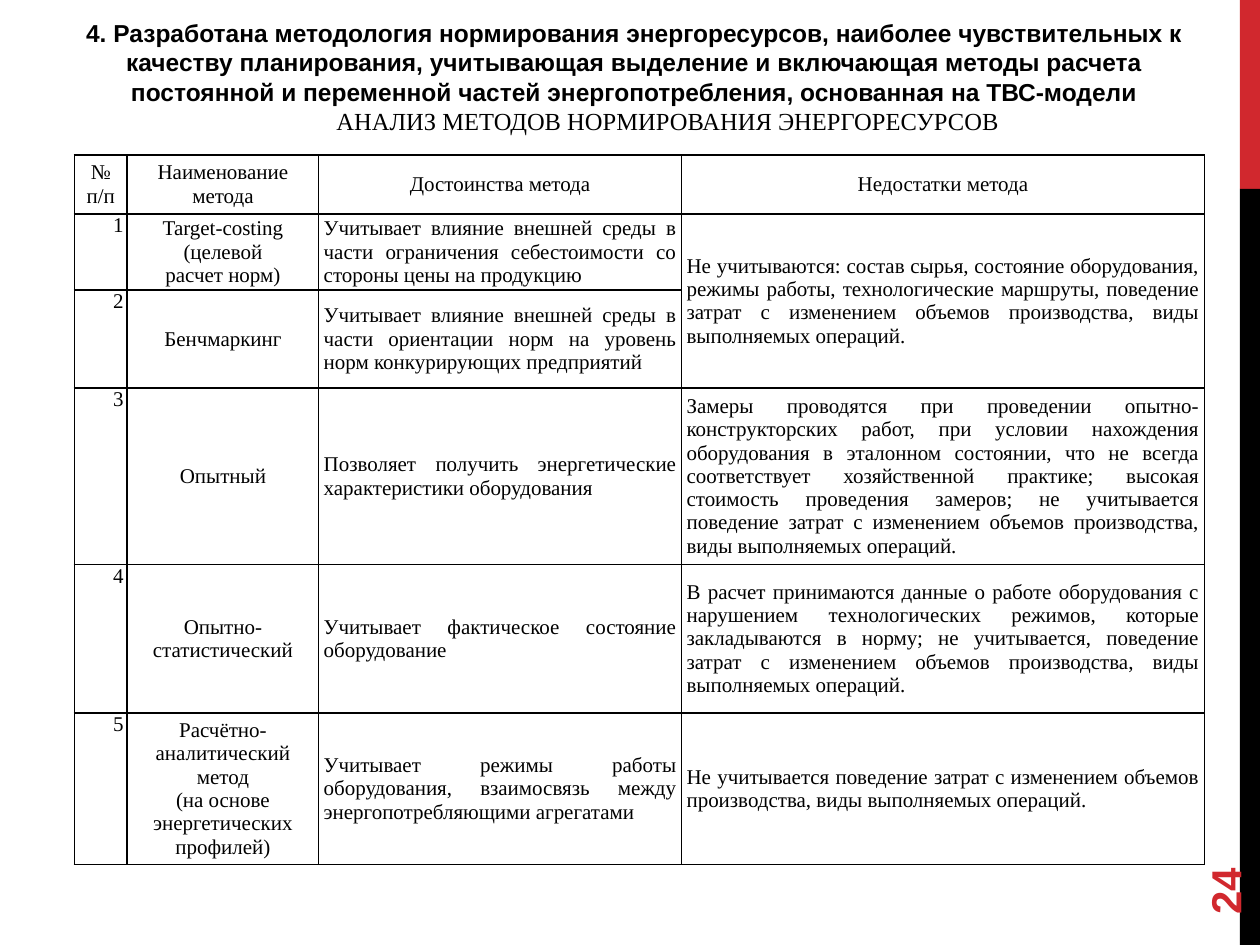
from typing import NamedTuple

from lxml import etree
from pptx import Presentation
from pptx.dml.color import RGBColor
from pptx.enum.shapes import MSO_SHAPE
from pptx.enum.text import MSO_ANCHOR, MSO_AUTO_SIZE, PP_ALIGN
from pptx.oxml.ns import qn
from pptx.util import Inches, Pt

RECT = MSO_SHAPE.RECTANGLE
TOP, MIDDLE = MSO_ANCHOR.TOP, MSO_ANCHOR.MIDDLE
LEFT, CENTER, JUSTIFY = PP_ALIGN.LEFT, PP_ALIGN.CENTER, PP_ALIGN.JUSTIFY
GROW = MSO_AUTO_SIZE.SHAPE_TO_FIT_TEXT

COLORS = {"red": "D1282E", "black": "000000"}
SANS, SERIF = "Arial", "Times New Roman"


class Box(NamedTuple):
    left: float
    top: float
    width: float
    height: float


class Bar(NamedTuple):
    box: Box
    color: str


class Method(NamedTuple):
    name: str
    pros: str
    cons: str


BARS = [
    Bar(Box(9.84, 0, 0.16, 1.5), "red"),
    Bar(Box(9.84, 1.5, 0.16, 6), "black"),
]
TITLE = (
    "4. Разработана методология нормирования энергоресурсов, наиболее "
    "чувствительных к качеству планирования, учитывающая выделение и "
    "включающая методы расчета постоянной и переменной частей "
    "энергопотребления, основанная на ТВС-модели"
)
TOPIC = "АНАЛИЗ МЕТОДОВ НОРМИРОВАНИЯ ЭНЕРГОРЕСУРСОВ"
HEADS = ["№\nп/п", "Наименование метода", "Достоинства метода", "Недостатки метода"]
METHODS = [
    Method(
        "Target-costing\n(целевой\nрасчет норм)",
        "Учитывает влияние внешней среды в части ограничения себестоимости "
        "со стороны цены на продукцию",
        "Не учитываются: состав сырья, состояние оборудования, режимы работы, "
        "технологические маршруты, поведение затрат с изменением объемов "
        "производства, виды выполняемых операций.",
    ),
    Method(
        "Бенчмаркинг",
        "Учитывает влияние внешней среды в части ориентации норм на уровень "
        "норм конкурирующих предприятий",
        "",
    ),
    Method(
        "Опытный",
        "Позволяет получить энергетические характеристики оборудования",
        "Замеры проводятся при проведении опытно-конструкторских работ, при "
        "условии нахождения оборудования в эталонном состоянии, что не всегда "
        "соответствует хозяйственной практике; высокая стоимость проведения "
        "замеров; не учитывается поведение затрат с изменением объемов "
        "производства, виды выполняемых операций.",
    ),
    Method(
        "Опытно-статистический",
        "Учитывает фактическое состояние оборудование",
        "В расчет принимаются данные о работе оборудования с нарушением "
        "технологических режимов, которые закладываются в норму; не "
        "учитывается, поведение затрат с изменением объемов производства, "
        "виды выполняемых операций.",
    ),
    Method(
        "Расчётно-аналитический\nметод\n(на основе энергетических профилей)",
        "Учитывает режимы работы оборудования, взаимосвязь между "
        "энергопотребляющими агрегатами",
        "Не учитывается поведение затрат с изменением объемов производства, "
        "виды выполняемых операций.",
    ),
]
GRID = Box(0.59, 1.23, 8.97, 5.57)
COLS = [0.42, 1.52, 2.88, 4.15]
ROWS = [0.47, 0.59, 0.78, 1.37, 1.18, 1.18]
ALIGNS = [CENTER, CENTER, JUSTIFY, JUSTIFY]
CELL = {
    "margin_left": Inches(0.04), "margin_right": Inches(0.04),
    "margin_top": 0, "margin_bottom": 0,
}


def apply(target, values: dict) -> None:
    for key, value in values.items():
        setattr(target, key, value)


def place(shape, box: Box) -> None:
    apply(shape, {key: Inches(val) for key, val in box._asdict().items()})


def style(para, font: str, size: int, bold: bool = False, color: str = "black",
          align=LEFT, indent: float = 0) -> None:
    """Format a paragraph, with an optional first-line indent in inches."""
    apply(para, {"alignment": align, "line_spacing": 1.0, "space_before": Pt(0)})
    if indent:
        props = para._p.get_or_add_pPr()
        props.set("marL", "0")
        props.set("indent", str(Inches(indent)))
    for run in para.runs:
        apply(run.font, {"name": font, "size": Pt(size), "bold": bold})
        run.font.color.rgb = RGBColor.from_string(COLORS[color])


def draw_bar(slide, bar: Bar) -> None:
    shape = slide.shapes.add_shape(RECT, *map(Inches, bar.box))
    shape.shadow.inherit = False
    shape.fill.solid()
    shape.fill.fore_color.rgb = RGBColor.from_string(COLORS[bar.color])
    shape.line.fill.background()


def draw_title(slide) -> None:
    title = slide.shapes.title
    place(title, Box(0.43, 0.09, 9.21, 1.04))
    frame = title.text_frame
    frame.text = f"{TITLE}\n{TOPIC}"
    apply(frame, {"word_wrap": True, "auto_size": GROW, "vertical_anchor": MIDDLE})
    head, topic = frame.paragraphs
    style(head, SANS, 14, bold=True, align=CENTER)
    style(topic, SERIF, 14, align=CENTER, indent=0.53)


def draw_number(slide) -> None:
    label = slide.shapes.add_textbox(*map(Inches, Box(9, 6.44, 1.44, 0.4)))
    label.rotation = 270
    frame = label.text_frame
    frame.text = "24"
    apply(frame, {"word_wrap": True, "vertical_anchor": MIDDLE})
    style(frame.paragraphs[0], SANS, 24, bold=True, color="red")


def add_border(cell) -> None:
    props = cell._tc.get_or_add_tcPr()
    for pos, side in enumerate(("lnL", "lnR", "lnT", "lnB")):
        line = etree.Element(qn(f"a:{side}"), w=str(Pt(1)))
        fill = etree.SubElement(line, qn("a:solidFill"))
        etree.SubElement(fill, qn("a:srgbClr"), val=COLORS["black"])
        props.insert(pos, line)


def draw_table(slide) -> None:
    frame = slide.shapes.add_table(len(ROWS), len(COLS), *map(Inches, GRID))
    table = frame.table
    apply(table, {"first_row": False, "horz_banding": False})
    for col, width in zip(table.columns, COLS):
        col.width = Inches(width)
    for row, height in zip(table.rows, ROWS):
        row.height = Inches(height)
    lines = [HEADS] + [[str(num), *method] for num, method in enumerate(METHODS, 1)]
    for i, line in enumerate(lines):
        for j, text in enumerate(line):
            cell = table.cell(i, j)
            count = i > 0 and j == 0
            cell.text = text
            apply(cell, CELL | {"vertical_anchor": TOP if count else MIDDLE})
            cell.fill.background()
            add_border(cell)
            for para in cell.text_frame.paragraphs:
                style(para, SERIF, 12, align=ALIGNS[j] if i else CENTER,
                      indent=0.28 if count else 0)
    table.cell(1, 3).merge(table.cell(2, 3))


def main() -> None:
    deck = Presentation()
    apply(deck, {"slide_width": Inches(10), "slide_height": Inches(7.5)})
    slide = deck.slides.add_slide(deck.slide_layouts[5])
    for bar in BARS:
        draw_bar(slide, bar)
    draw_number(slide)
    draw_table(slide)
    draw_title(slide)
    deck.save("out.pptx")


if __name__ == "__main__":
    main()
